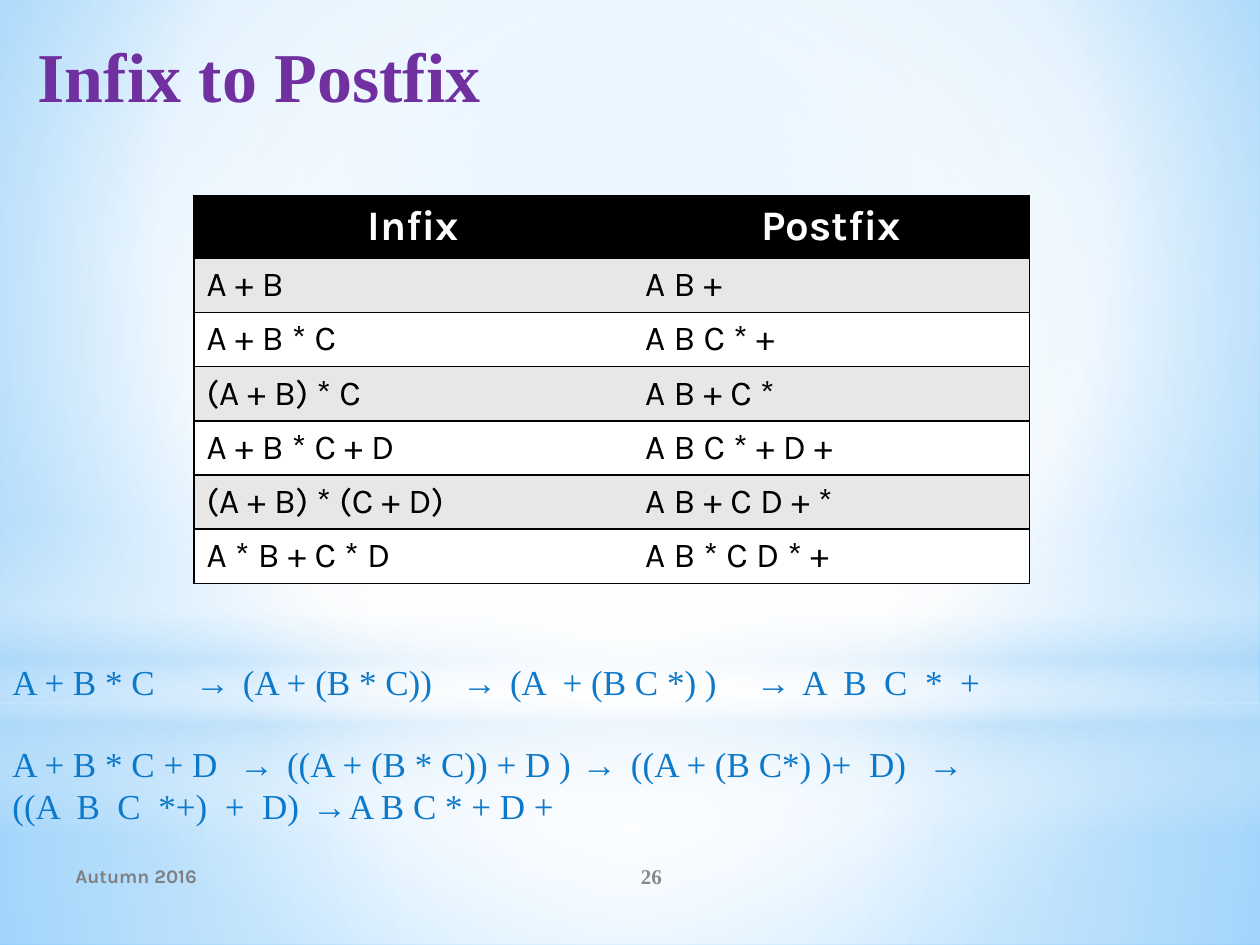
from lxml import etree
from pptx import Presentation
from pptx.dml.color import RGBColor
from pptx.enum import shapes, text
from pptx.oxml.ns import qn
from pptx.util import Inches, Pt

SERIF, SANS = "Times New Roman", "Karla"
WHITE, PALE = "FFFFFF", "B4DCFA"
ROWS = [
    ("Infix", "Postfix"),
    ("A + B", "A B +"),
    ("A + B * C", "A B C * +"),
    ("(A + B) * C", "A B + C *"),
    ("A + B * C + D", "A B C * + D +"),
    ("(A + B) * (C + D)", "A B + C D + *"),
    ("A * B + C * D", "A B * C D * +"),
]
# Text, tab stops in inches, space before in points
STEPS = [
    ("A + B * C\t→\t(A + (B * C))\t→\t(A  + (B C *) )\t→\tA  B  C  *  +",
     (1.45, 1.83, 3.57, 3.95, 5.9, 6.27), 0),
    ("A + B * C + D\t→\t((A + (B * C)) + D )\t→\t((A + (B C*) )+  D)\t→",
     (1.8, 2.18, 4.52, 4.91, 7.27), 23),
    ("((A  B  C  *+)  +  D)\t→\tA B C * + D +", (2.38, 2.67), 0),
]


def rgb(color):
    return RGBColor.from_string(color)


def style(p, size, font, color, bold=False, align=text.PP_ALIGN.LEFT):
    p.alignment = align
    p.font.size, p.font.name, p.font.bold = Pt(size), font, bold
    p.font.color.rgb = rgb(color)


def set_gradient(parent, stops, center=None):
    """Replace parent's empty fill; without a center rectangle it runs downwards."""
    grad = etree.Element(qn("a:gradFill"), rotWithShape="1")
    stop_list = etree.SubElement(grad, qn("a:gsLst"))
    for pos, color, alpha in stops:
        gs = etree.SubElement(stop_list, qn("a:gs"), pos=str(pos * 1000))
        clr = etree.SubElement(gs, qn("a:srgbClr"), val=color)
        if alpha < 100:
            etree.SubElement(clr, qn("a:alpha"), val=str(alpha * 1000))
    if center:
        circle = etree.SubElement(grad, qn("a:path"), path="circle")
        sides = {side: str(v * 1000) for side, v in zip("ltrb", center)}
        etree.SubElement(circle, qn("a:fillToRect"), **sides)
    else:
        etree.SubElement(grad, qn("a:lin"), ang="5400000", scaled="0")
    parent.replace(parent.find(qn("a:noFill")), grad)


def add_glow(slide, kind, box, stops, center=None):
    sp = slide.shapes.add_shape(kind, *map(Inches, box))
    sp.shadow.inherit = False
    sp.line.fill.background()
    sp.fill.background()
    set_gradient(sp.element.spPr, stops, center)


def add_backdrop(slide):
    slide.background.fill.background()
    set_gradient(slide.element.find(".//" + qn("p:bgPr")),
                 [(0, "9ED5FF", 100), (60, WHITE, 100), (100, "5BB9FF", 100)],
                 (20, 10, 20, 60))
    rect, oval = shapes.MSO_SHAPE.RECTANGLE, shapes.MSO_SHAPE.OVAL
    middle = (50, 50, 50, 50)
    add_glow(slide, rect, (0, 5.58, 10, 1.92),
             [(0, WHITE, 91), (37, WHITE, 76), (100, PALE, 79)], middle)
    add_glow(slide, rect, (0, 0, 10, 5.58),
             [(0, WHITE, 89), (48, WHITE, 62), (100, PALE, 79)], middle)
    add_glow(slide, rect, (0, 4.12, 10, 2.5),
             [(0, WHITE, 0), (29, WHITE, 30), (45, PALE, 40),
              (55, WHITE, 26), (65, PALE, 60), (100, WHITE, 0)])
    add_glow(slide, oval, (0, 1.75, 10, 5.58),
             [(0, WHITE, 100), (56, WHITE, 0)], middle)


def set_borders(cell, visible):
    tc_pr = cell._tc.get_or_add_tcPr()
    for i, side in enumerate("LRTB"):
        ln = etree.Element(qn("a:ln" + side), w=str(Pt(1)))
        if side in visible:
            fill = etree.SubElement(ln, qn("a:solidFill"))
            etree.SubElement(fill, qn("a:srgbClr"), val="000000")
        else:
            etree.SubElement(ln, qn("a:noFill"))
        tc_pr.insert(i, ln)


def add_expression_table(slide, box):
    table = slide.shapes.add_table(len(ROWS), 2, *map(Inches, box)).table
    for column, width in zip(table.columns, (3.48, 3.15)):
        column.width = Inches(width)
    for r, row in enumerate(ROWS):
        header = r == 0
        table.rows[r].height = Inches(0.5 if header else 0.43)
        for c, expression in enumerate(row):
            cell = table.cell(r, c)
            cell.text = expression
            cell.fill.solid()
            cell.fill.fore_color.rgb = rgb(
                "000000" if header else "E7E7E7" if r % 2 else WHITE)
            set_borders(cell, "TB" + "LR"[c])
            p = cell.text_frame.paragraphs[0]
            if header:
                style(p, 24, SANS, WHITE, True, text.PP_ALIGN.CENTER)
            else:
                style(p, 20, SANS, "000000")


def add_text_frame(slide, box, anchor=text.MSO_ANCHOR.TOP):
    tf = slide.shapes.add_textbox(*map(Inches, box)).text_frame
    tf.word_wrap = True
    tf.vertical_anchor = anchor
    return tf


def add_conversion_steps(slide, box):
    tf = add_text_frame(slide, box)
    for i, (line, stops, gap) in enumerate(STEPS):
        p = tf.add_paragraph() if i else tf.paragraphs[0]
        p.text = line
        p.space_before = Pt(gap)
        style(p, 20, SERIF, "0D79CA")
        tabs = etree.Element(qn("a:tabLst"))
        for stop in stops:
            etree.SubElement(tabs, qn("a:tab"), pos=str(Inches(stop)), algn="l")
        p.font._element.addprevious(tabs)


def add_footer(slide, left, top):
    middle = text.MSO_ANCHOR.MIDDLE
    tf = add_text_frame(slide, (left + 3.67, top, 2, 0.4), middle)
    tf.text = "26"
    style(tf.paragraphs[0], 12, SERIF, "898989", True, text.PP_ALIGN.CENTER)
    tf = add_text_frame(slide, (left, top, 3.67, 0.4), middle)
    tf.text = "Autumn 2016"
    style(tf.paragraphs[0], 11, SANS, "808080", True)


def place_title(slide, box):
    title = slide.shapes.title
    title.left, title.top, title.width, title.height = map(Inches, box)
    tf = title.text_frame
    tf.text = "Infix to Postfix"
    tf.vertical_anchor = text.MSO_ANCHOR.TOP
    style(tf.paragraphs[0], 40, SERIF, "7030A0", True)
    slide.shapes._spTree.append(title.element)  # in front of the backdrop


def main():
    prs = Presentation()
    prs.slide_width, prs.slide_height = Inches(10), Inches(7.5)
    slide = prs.slides.add_slide(prs.slide_layouts[5])
    add_backdrop(slide)
    add_expression_table(slide, (1.54, 1.55, 6.63, 3.1))
    add_conversion_steps(slide, (0, 5.19, 8.46, 1.45))
    add_footer(slide, 0.5, 6.75)
    place_title(slide, (0.2, 0.21, 9.53, 1.25))
    prs.save("out.pptx")


if __name__ == "__main__":
    main()
